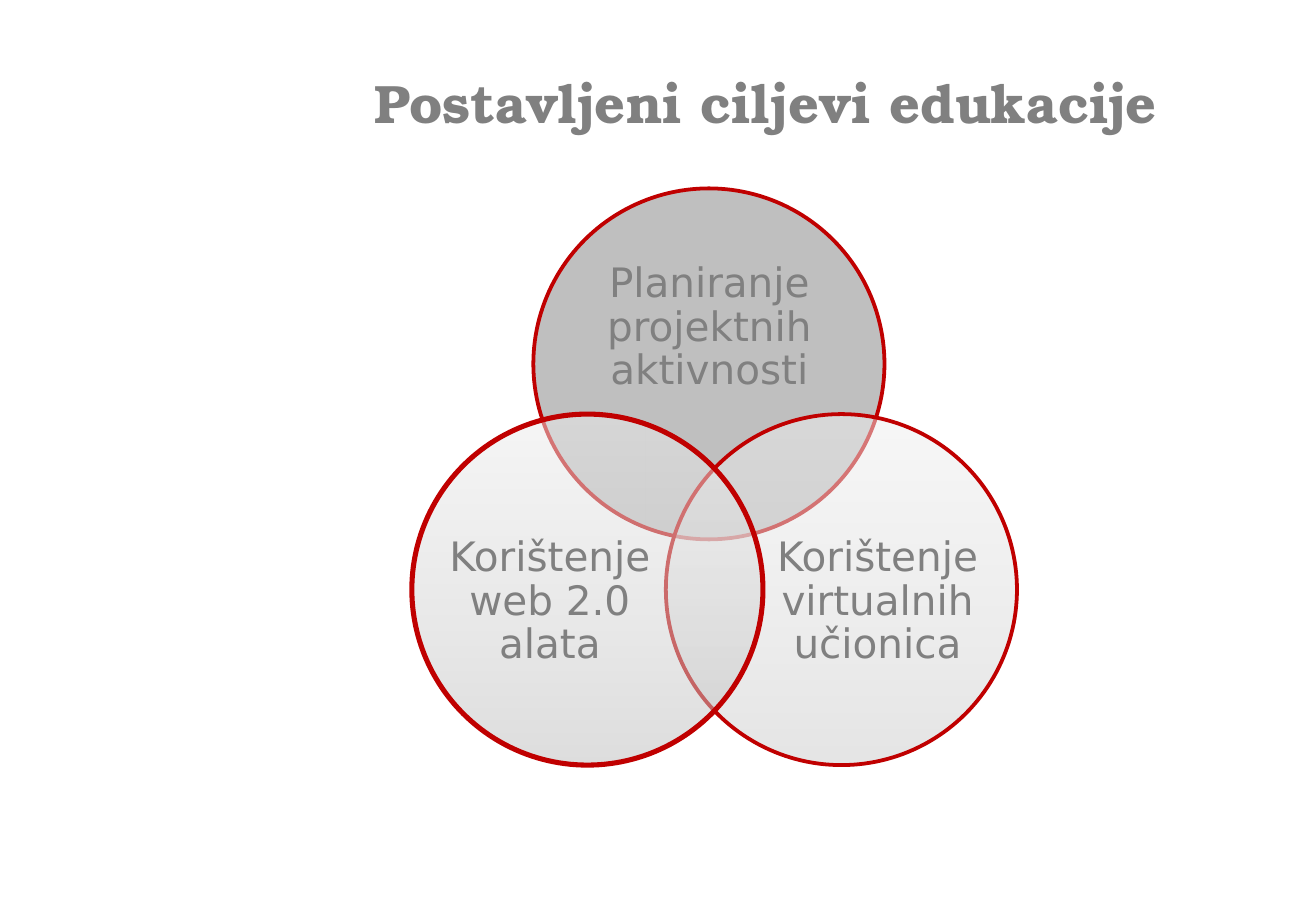
from lxml.etree import SubElement
from pptx import Presentation
from pptx.dml.color import RGBColor
from pptx.enum.shapes import MSO_SHAPE as Shape
from pptx.enum.text import MSO_ANCHOR as Anchor, PP_ALIGN as Align
from pptx.oxml.ns import qn
from pptx.util import Cm, Pt

GREY = RGBColor(0x80, 0x80, 0x80)
SILVER = RGBColor(0xBF, 0xBF, 0xBF)
RED = RGBColor(0xC0, 0x00, 0x00)
LIGHT_STOPS = {
    0: RGBColor(0xCC, 0xCC, 0xCC),
    35: RGBColor(0xDB, 0xDB, 0xDB),
    100: RGBColor(0xF1, 0xF1, 0xF1),
}
DARK_STOPS = {
    0: RGBColor(0xBD, 0xBD, 0xBD),
    35: RGBColor(0xD1, 0xD1, 0xD1),
    100: RGBColor(0xEE, 0xEE, 0xEE),
}

DIAMETER = Cm(7.34)
LOWER_TOP = Cm(8.66)
LABEL_TOP = Cm(10.57)
LABEL_SIZE = (Cm(4.39), Cm(4.04))
TITLE_FONT = {"name": "TeX Gyre Bonum", "size": Pt(32), "bold": True}
LABEL_FONT = {"name": "DejaVu Sans", "size": Pt(24)}


def fill_gradient(shape, stops):
    """Fill from the bottom upwards with half-transparent colour stops."""
    shape.fill.gradient()
    shape.fill.gradient_angle = 90
    stop_list = shape.element.spPr.find(qn("a:gradFill")).find(qn("a:gsLst"))
    for stop in list(stop_list):
        stop_list.remove(stop)
    for position, color in stops.items():
        stop = SubElement(stop_list, qn("a:gs"), pos=str(position * 1000))
        tint = SubElement(stop, qn("a:srgbClr"), val=str(color))
        SubElement(tint, qn("a:alpha"), val="50000")


def add_circle(page, left, top, line_width, stops=None):
    circle = page.shapes.add_shape(Shape.OVAL, left, top, DIAMETER, DIAMETER)
    circle.shadow.inherit = False
    circle.line.color.rgb = RED
    circle.line.width = line_width
    if stops:
        fill_gradient(circle, stops)
    else:
        circle.fill.solid()
        circle.fill.fore_color.rgb = SILVER


def add_text(page, text, left, top, width, height, font):
    box = page.shapes.add_textbox(left, top, width, height)
    box.text_frame.word_wrap = True
    para = box.text_frame.paragraphs[0]
    span = para.add_run()
    span.text = text
    span.font.color.rgb = GREY
    for name, value in font.items():
        setattr(span.font, name, value)
    return box.text_frame, para


def add_label(page, text, left, top, width, height):
    frame, para = add_text(page, text, left, top, width, height, LABEL_FONT)
    frame.vertical_anchor = Anchor.MIDDLE
    for side in ("left", "top", "right", "bottom"):
        setattr(frame, f"margin_{side}", 0)
    para.alignment = Align.CENTER
    para.line_spacing = 0.9


def main():
    deck = Presentation()
    deck.slide_width, deck.slide_height = Cm(27.51), Cm(19.05)
    page = deck.slides.add_slide(deck.slide_layouts[6])

    add_circle(page, Cm(11.15), Cm(3.94), Pt(2.25))
    add_label(page, "Planiranje projektnih aktivnosti",
              Cm(12.14), Cm(5.21), Cm(5.38), Cm(3.3))
    add_circle(page, Cm(13.92), LOWER_TOP, Pt(2.25), LIGHT_STOPS)
    add_label(page, "Korištenje virtualnih učionica",
              Cm(16.15), LABEL_TOP, *LABEL_SIZE)
    add_circle(page, Cm(8.61), LOWER_TOP, Pt(3), DARK_STOPS)
    add_label(page, "Korištenje web 2.0 alata",
              Cm(9.3), LABEL_TOP, *LABEL_SIZE)
    add_text(page, "Postavljeni ciljevi edukacije",
             Cm(7.57), Cm(1.32), Cm(19), Cm(1.4), TITLE_FONT)

    deck.save("out.pptx")


if __name__ == "__main__":
    main()
